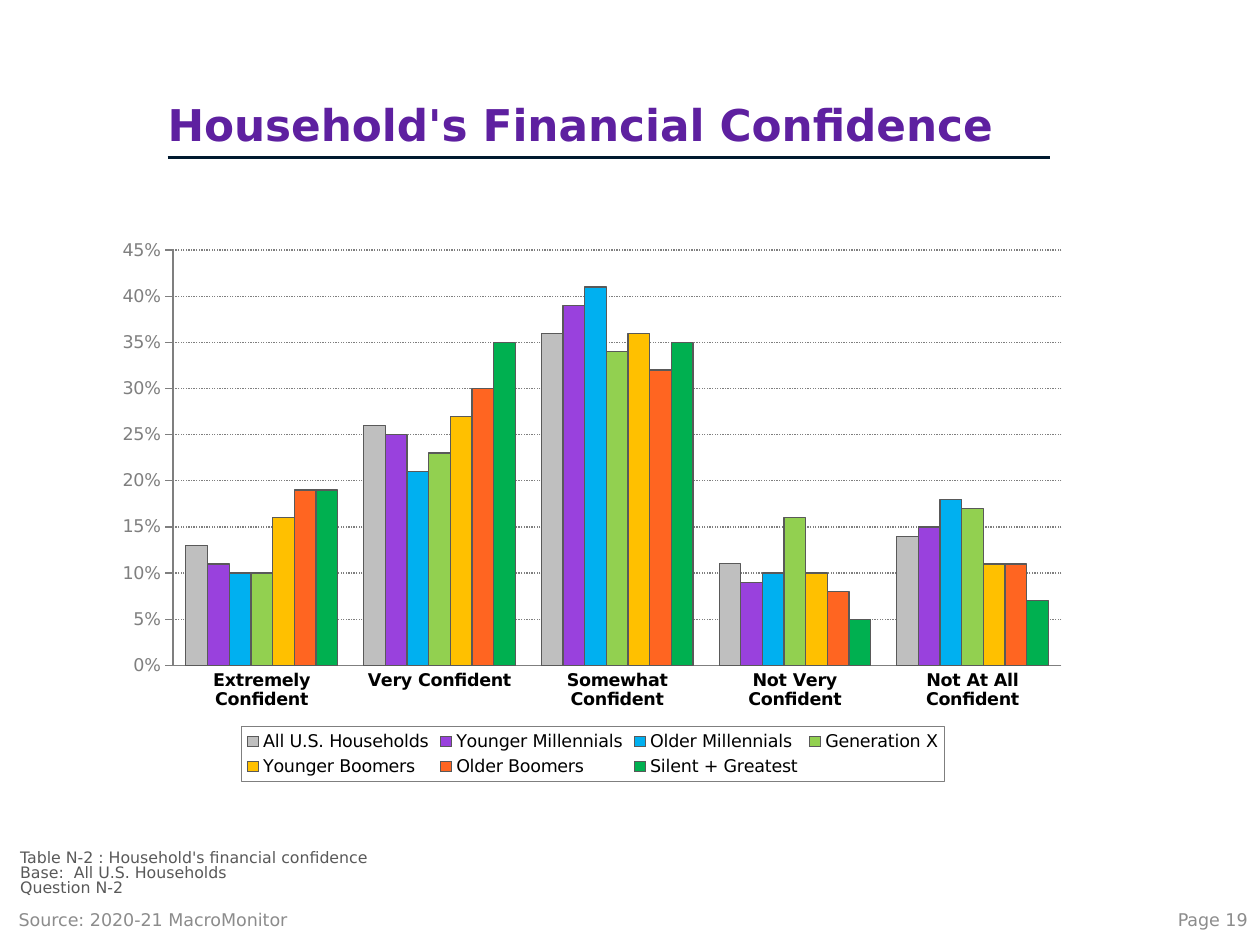
from dataclasses import dataclass

from lxml import etree
from pptx import Presentation
from pptx.chart.data import CategoryChartData
from pptx.dml.color import RGBColor
from pptx.enum.chart import XL_CHART_TYPE, XL_LEGEND_POSITION, XL_TICK_MARK
from pptx.enum.dml import MSO_LINE
from pptx.enum.shapes import MSO_CONNECTOR
from pptx.enum.text import MSO_ANCHOR, PP_ALIGN
from pptx.oxml import parse_xml
from pptx.oxml.ns import nsdecls, qn
from pptx.util import Inches, Pt

FONT = "DejaVu Sans"
PURPLE = RGBColor(0x5E, 0x20, 0xA0)
NAVY = RGBColor(0x00, 0x19, 0x2F)
BLACK = RGBColor(0x00, 0x00, 0x00)
FOOTER_GRAY = RGBColor(0x8C, 0x8C, 0x8C)
DARK_GRAY = RGBColor(0x59, 0x59, 0x59)
AXIS_GRAY = RGBColor(0x7F, 0x7F, 0x7F)

LEFT, RIGHT = PP_ALIGN.LEFT, PP_ALIGN.RIGHT
MIDDLE, BOTTOM = MSO_ANCHOR.MIDDLE, MSO_ANCHOR.BOTTOM


@dataclass
class TextBlock:
    lines: list[str]
    box: tuple[float, float, float, float]
    size: float
    color: RGBColor
    bold: bool = False
    anchor: MSO_ANCHOR = MIDDLE
    align: PP_ALIGN = LEFT
    spacing: float = 1.0
    insets: tuple[float, float] = (0.1, 0.05)  # sides, top and bottom


@dataclass
class Generation:
    name: str
    shares: tuple[float, ...]
    color: RGBColor
    outline: float = 0.75


TEXTS = [
    TextBlock(["Household's Financial Confidence"], (1.33, 0.4, 7, 0.85), 25, PURPLE,
              bold=True, anchor=BOTTOM, spacing=0.9, insets=(0, 0.05)),
    TextBlock(["Source: 2020-21 MacroMonitor"], (0.05, 7.1, 3.33, 0.4), 10, FOOTER_GRAY),
    TextBlock(["Table N-2 : Household's financial confidence",
               "Base:  All U.S. Households", "Question N-2"],
              (0.16, 6.76, 9.71, 0.36), 9, DARK_GRAY,
              anchor=BOTTOM, spacing=0.8, insets=(0, 0)),
    TextBlock(["Page 19"], (7.75, 7.1, 2.25, 0.4), 10, FOOTER_GRAY, align=RIGHT),
]

ANSWERS = ["Extremely Confident", "Very Confident", "Somewhat Confident",
           "Not Very Confident", "Not At All Confident"]
GENERATIONS = [
    Generation("All U.S. Households", (0.13, 0.26, 0.36, 0.11, 0.14),
               RGBColor(0xBF, 0xBF, 0xBF), outline=0.5),
    Generation("Younger Millennials", (0.11, 0.25, 0.39, 0.09, 0.15),
               RGBColor(0x99, 0x41, 0xDD)),
    Generation("Older Millennials", (0.10, 0.21, 0.41, 0.10, 0.18),
               RGBColor(0x00, 0xB0, 0xF0)),
    Generation("Generation X", (0.10, 0.23, 0.34, 0.16, 0.17),
               RGBColor(0x92, 0xD0, 0x50)),
    Generation("Younger Boomers", (0.16, 0.27, 0.36, 0.10, 0.11),
               RGBColor(0xFF, 0xC0, 0x00)),
    Generation("Older Boomers", (0.19, 0.30, 0.32, 0.08, 0.11),
               RGBColor(0xFF, 0x65, 0x21)),
    Generation("Silent + Greatest", (0.19, 0.35, 0.35, 0.05, 0.07),
               RGBColor(0x00, 0xB0, 0x50)),
]


def style_font(font, size: float, color: RGBColor, bold: bool = False) -> None:
    font.name = FONT
    font.size = Pt(size)
    font.bold = bold
    font.color.rgb = color


def style_line(line, color: RGBColor, width: float) -> None:
    line.color.rgb = color
    line.width = Pt(width)


def add_text(slide, block: TextBlock) -> None:
    frame = slide.shapes.add_textbox(*map(Inches, block.box)).text_frame
    frame.word_wrap = True
    frame.vertical_anchor = block.anchor
    side, edge = map(Inches, block.insets)
    frame.margin_left = frame.margin_right = side
    frame.margin_top = frame.margin_bottom = edge
    frame.text = "\n".join(block.lines)
    for paragraph in frame.paragraphs:
        paragraph.alignment = block.align
        paragraph.line_spacing = block.spacing
        style_font(paragraph.font, block.size, block.color, block.bold)


def add_title_rule(slide) -> None:
    rule = slide.shapes.add_connector(MSO_CONNECTOR.STRAIGHT, Inches(1.33), Inches(1.25),
                                      Inches(8.33), Inches(1.25))
    style_line(rule.line, NAVY, 2)
    etree.SubElement(rule._element.spPr, qn("a:effectLst"))


def manual_layout(x: float, y: float, w: float, h: float, inner: bool = False):
    """Return a c:layout element; lengths are fractions of the chart."""
    target = '<c:layoutTarget val="inner"/>' if inner else ""
    return parse_xml(
        f'<c:layout {nsdecls("c")}><c:manualLayout>{target}'
        '<c:xMode val="edge"/><c:yMode val="edge"/>'
        f'<c:x val="{x}"/><c:y val="{y}"/><c:w val="{w}"/><c:h val="{h}"/>'
        '</c:manualLayout></c:layout>')


def place_plot(chart) -> None:
    plot_area = chart._chartSpace.chart.plotArea
    for old in plot_area.findall(qn("c:layout")):
        plot_area.remove(old)
    plot_area.insert(0, manual_layout(0.07, 0.04, 0.91, 0.75, inner=True))


def add_legend(chart) -> None:
    chart.has_legend = True
    legend = chart.legend
    legend.position = XL_LEGEND_POSITION.BOTTOM
    legend.include_in_layout = False
    style_font(legend.font, 10, BLACK)
    element = legend._element
    for old in element.findall(qn("c:layout")):
        element.remove(old)
    element.find(qn("c:legendPos")).addnext(manual_layout(0.14, 0.9, 0.72, 0.1))
    element.find(qn("c:overlay")).addnext(parse_xml(
        f'<c:spPr {nsdecls("c", "a")}><a:noFill/><a:ln w="{Pt(0.75)}"><a:solidFill>'
        f'<a:srgbClr val="{AXIS_GRAY}"/></a:solidFill></a:ln></c:spPr>'))


def style_axes(chart) -> None:
    answers, shares = chart.category_axis, chart.value_axis
    for axis, color, bold in ((answers, BLACK, True), (shares, AXIS_GRAY, False)):
        style_font(axis.tick_labels.font, 10, color, bold)
        style_line(axis.format.line, AXIS_GRAY, 0.75)
        axis.minor_tick_mark = XL_TICK_MARK.NONE
    answers.major_tick_mark = XL_TICK_MARK.NONE
    shares.major_tick_mark = XL_TICK_MARK.OUTSIDE
    shares.minimum_scale, shares.maximum_scale, shares.major_unit = 0, 0.45, 0.05
    shares.tick_labels.number_format = "0%"
    shares.tick_labels.number_format_is_linked = False
    shares.has_major_gridlines = True
    gridline = shares.major_gridlines.format.line
    style_line(gridline, AXIS_GRAY, 0.75)
    gridline.dash_style = MSO_LINE.ROUND_DOT


def add_confidence_chart(slide) -> None:
    data = CategoryChartData(number_format="0%")
    data.categories = ANSWERS
    for generation in GENERATIONS:
        data.add_series(generation.name, generation.shares)
    chart = slide.shapes.add_chart(XL_CHART_TYPE.COLUMN_CLUSTERED, Inches(0.83), Inches(1.81),
                                   Inches(7.75), Inches(4.4), data).chart
    chart.has_title = False
    style_font(chart.font, 10, BLACK)
    bars = chart.plots[0]
    bars.gap_width, bars.overlap = 120, 0
    bars.vary_by_categories = False
    for series, generation in zip(bars.series, GENERATIONS):
        series.format.fill.solid()
        series.format.fill.fore_color.rgb = generation.color
        style_line(series.format.line, DARK_GRAY, generation.outline)
    style_axes(chart)
    place_plot(chart)
    add_legend(chart)


def main() -> None:
    deck = Presentation()
    deck.slide_width, deck.slide_height = Inches(10), Inches(7.5)
    slide = deck.slides.add_slide(deck.slide_layouts[6])
    add_title_rule(slide)
    for block in TEXTS:
        add_text(slide, block)
    add_confidence_chart(slide)
    deck.save("out.pptx")


if __name__ == "__main__":
    main()
